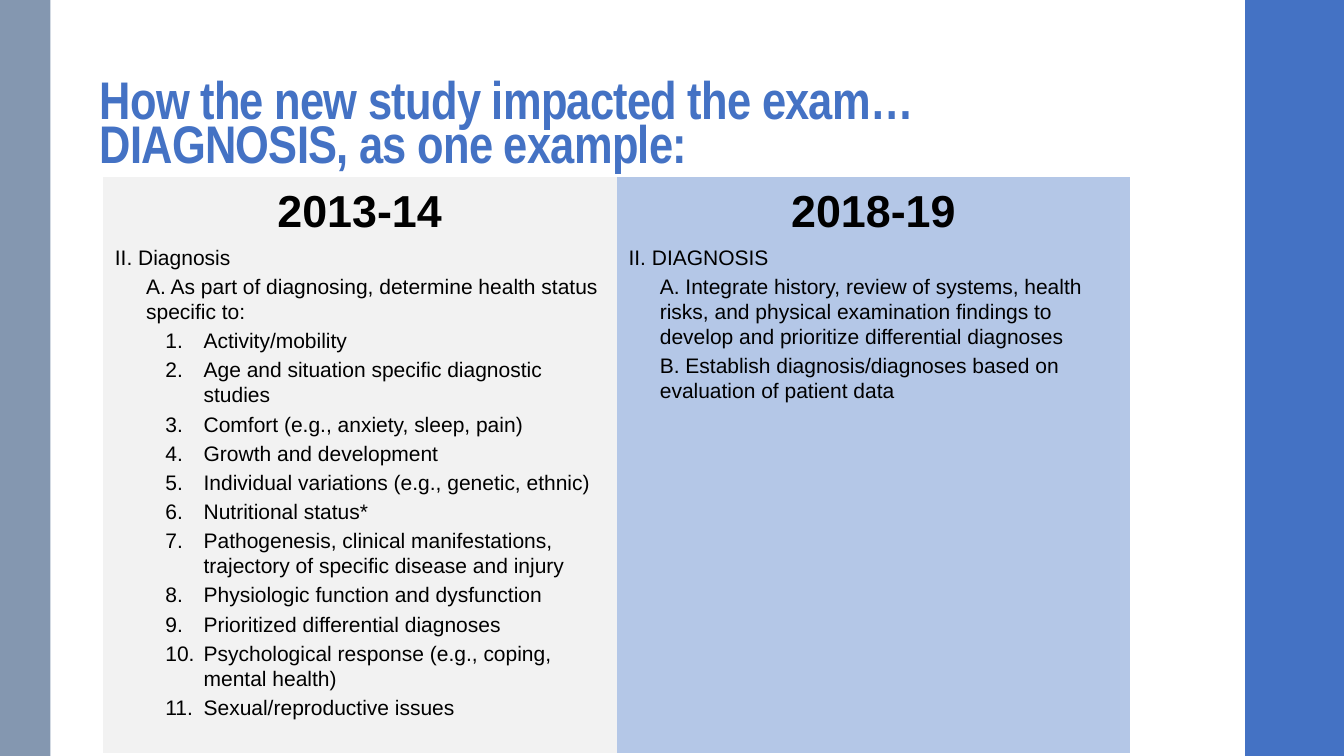
"""Build the slide comparing the 2013-14 and 2018-19 diagnosis outlines."""
from dataclasses import dataclass

from lxml.etree import SubElement
from pptx import Presentation
from pptx.dml.color import RGBColor
from pptx.enum.shapes import MSO_SHAPE
from pptx.enum.text import MSO_ANCHOR, PP_ALIGN
from pptx.oxml.ns import qn
from pptx.util import Inches, Pt


@dataclass(frozen=True)
class Theme:
    blue: str = "4472C4"
    slate: str = "8497B0"
    grey: str = "F2F2F2"
    pale_blue: str = "B4C7E7"
    black: str = "000000"
    title_font: str = "Arial Narrow"
    body_font: str = "Arial"
    title_size: float = 37.8
    header_size: float = 32
    body_size: float = 15


theme = Theme()


def add_text(p, text, size, font=theme.body_font, color=theme.black, bold=False,
             align=PP_ALIGN.LEFT, line=1.0, before=0, after=0, left=0, hanging=0,
             numbered=False, tracking=0):
    p.alignment, p.line_spacing = align, line
    p.space_before, p.space_after = Pt(before), Pt(after)
    p.text = text
    for r in p.runs:
        r.font.name, r.font.size, r.font.bold = font, Pt(size), bold
        r.font.color.rgb = RGBColor.from_string(color)
        if tracking:
            r._r.get_or_add_rPr().set("spc", str(int(tracking * 100)))
    pPr = p._p.get_or_add_pPr()
    pPr.set("marL", str(Inches(left)))
    pPr.set("indent", str(Inches(-hanging)))
    if numbered:
        SubElement(pPr, qn("a:buFont"), typeface="+mj-lt")
        SubElement(pPr, qn("a:buAutoNum"), type="arabicPeriod")
    else:
        SubElement(pPr, qn("a:buNone"))


prs = Presentation()
prs.slide_width, prs.slide_height = Inches(13.33), Inches(7.5)
s = prs.slides.add_slide(prs.slide_layouts[6])

for left, width, color in ((12.35, 1, theme.blue), (0, 0.5, theme.slate)):
    sp = s.shapes.add_shape(MSO_SHAPE.RECTANGLE, Inches(left), 0, Inches(width), prs.slide_height)
    sp.shadow.inherit = False
    sp.fill.solid()
    sp.fill.fore_color.rgb = RGBColor.from_string(color)
    sp.line.fill.background()

title = s.shapes.add_textbox(Inches(0.89), Inches(0.7), Inches(11.56), Inches(1.06))
tf = title.text_frame
tf.word_wrap = True
tf.vertical_anchor = MSO_ANCHOR.BOTTOM
tf.margin_left = tf.margin_right = Inches(0.1)
tf.margin_top, tf.margin_bottom = Inches(0.03), Inches(0.05)
add_text(tf.paragraphs[0], "How the new study impacted the exam…\vDIAGNOSIS, as one example:",
         theme.title_size, font=theme.title_font, color=theme.blue, bold=True,
         line=0.7, tracking=-0.5)

LEVELS = {
    "heading": {},
    "topic": {"left": 0.31},
    "item": {"left": 0.88, "hanging": 0.38, "numbered": True},
}
health_items = (
    "Activity/mobility",
    "Age and situation specific diagnostic studies",
    "Comfort (e.g., anxiety, sleep, pain)",
    "Growth and development",
    "Individual variations (e.g., genetic, ethnic)",
    "Nutritional status*",
    "Pathogenesis, clinical manifestations, trajectory of specific disease and injury",
    "Physiologic function and dysfunction",
    "Prioritized differential diagnoses",
    "Psychological response (e.g., coping, mental health)",
    "Sexual/reproductive issues",
)
outlines = (
    ("2013-14", theme.grey, [
        ("heading", "II. Diagnosis"),
        ("topic", "A. As part of diagnosing, determine health status specific to:"),
        *(("item", item) for item in health_items),
    ]),
    ("2018-19", theme.pale_blue, [
        ("heading", "II. DIAGNOSIS"),
        ("topic", "A. Integrate history, review of systems, health risks, and physical "
                  "examination findings to develop and prioritize differential diagnoses"),
        ("topic", "B. Establish diagnosis/diagnoses based on evaluation of patient data"),
    ]),
)

table = s.shapes.add_table(2, 2, Inches(1.02), Inches(1.76), Inches(10.19), Inches(5.58)).table
table.first_row = table.horz_banding = False
NO_STYLE_NO_GRID = "{2D5ABB26-0587-4C30-8999-92F81FD0307C}"
table._tbl.tblPr.find(qn("a:tableStyleId")).text = NO_STYLE_NO_GRID
table.rows[0].height, table.rows[1].height = Inches(0.67), Inches(4.91)

for col, (years, color, outline) in enumerate(outlines):
    header, body = table.cell(0, col), table.cell(1, col)
    for cell, side, top in ((header, 0.01, 0.01), (body, 0.12, 0)):
        cell.fill.solid()
        cell.fill.fore_color.rgb = RGBColor.from_string(color)
        cell.margin_left = cell.margin_right = Inches(side)
        cell.margin_top, cell.margin_bottom = Inches(top), 0
    header.vertical_anchor = MSO_ANCHOR.MIDDLE
    add_text(header.text_frame.paragraphs[0], years, theme.header_size, bold=True,
             align=PP_ALIGN.CENTER)
    tf = body.text_frame
    for i, (level, text) in enumerate(outline):
        p = tf.add_paragraph() if i else tf.paragraphs[0]
        add_text(p, text, theme.body_size, line=1.07, before=2, after=1, **LEVELS[level])

prs.save("out.pptx")
